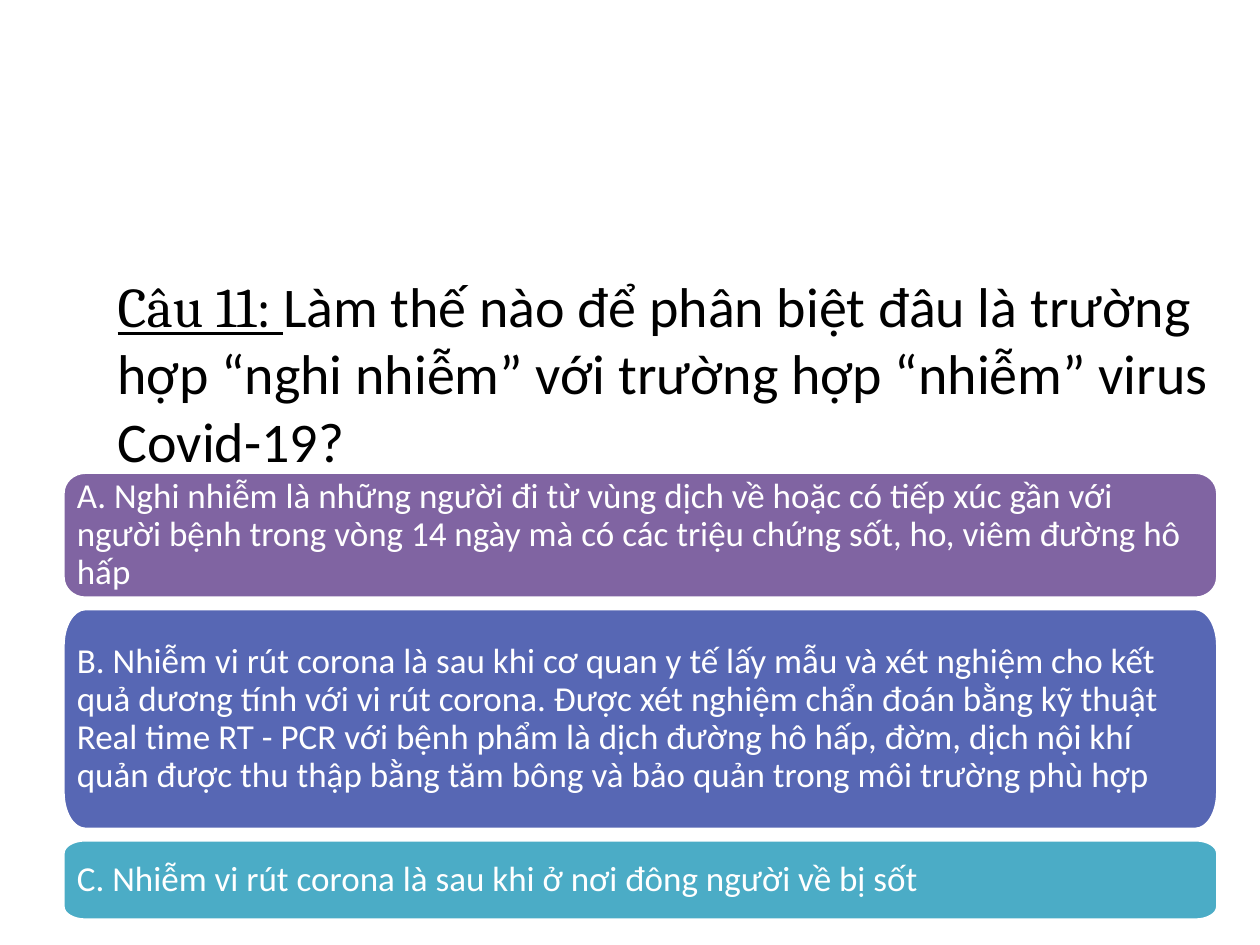
from dataclasses import dataclass

from lxml import etree
from pptx import Presentation
from pptx.dml.color import RGBColor
from pptx.enum.text import MSO_ANCHOR as Anchor, PP_ALIGN as Align
from pptx.oxml.ns import qn
from pptx.util import Cm, Pt


@dataclass
class Theme:
    ink: str = "000000"
    paper: str = "FFFFFF"
    purple: str = "8064A2"
    indigo: str = "5767B4"
    teal: str = "4BACC6"
    body: str = "Calibri"
    label: str = "Cambria"
    question: int = 32
    answer: int = 20


theme = Theme()


def add_run(p, text, font, size, color, underline=None):
    r = p.add_run()
    r.text = text
    r.font.name = font
    r.font.size = Pt(size)
    r.font.color.rgb = RGBColor.from_string(color)
    r.font.underline = underline


def add_panel(shapes, left, top, width, height, rx, ry):
    right, bottom = left + width, top + height
    outline = [
        (left, top + ry), (left + rx, top),
        (right - rx, top), (right, top + ry),
        (right, bottom - ry), (right - rx, bottom),
        (left + rx, bottom), (left, bottom - ry),
    ]
    points = [(Cm(x), Cm(y)) for x, y in outline]
    builder = shapes.build_freeform(*points[0])
    builder.add_line_segments(points[1:], close=True)
    sp = builder.convert_to_shape()
    corners = [(left, top), (right, top), (right, bottom), (left, bottom)]
    lines = list(sp._element.iter(qn("a:lnTo")))[:7:2]
    for i, (line, (x, y)) in enumerate(zip(lines, corners)):
        start, end = points[2 * i], points[2 * i + 1]
        line.tag = qn("a:cubicBezTo")
        for n, (px, py) in enumerate((start, end)):
            pt = etree.Element(qn("a:pt"))
            pt.set("x", str(round(px + 0.55 * (Cm(x) - px) - Cm(left))))
            pt.set("y", str(round(py + 0.55 * (Cm(y) - py) - Cm(top))))
            line.insert(n, pt)
    return sp


prs = Presentation()
prs.slide_width, prs.slide_height = Cm(25.4), Cm(19.05)
s = prs.slides.add_slide(prs.slide_layouts[6])

sp = s.shapes.add_textbox(Cm(2.12), Cm(5.71), Cm(22.86), Cm(3.6))
tf = sp.text_frame
tf.word_wrap = True
tf.vertical_anchor = Anchor.MIDDLE
p = tf.paragraphs[0]
p.alignment = Align.LEFT
add_run(p, "Câu 11: ", theme.label, theme.question, theme.ink, underline=True)
add_run(
    p,
    "Làm thế nào để phân biệt đâu là trường hợp “nghi nhiễm” với trường hợp “nhiễm” virus Covid-19?",
    theme.body, theme.question, theme.ink,
)

answers = [
    (2.54, theme.purple,
     "A. Nghi nhiễm là những người đi từ vùng dịch về hoặc có tiếp xúc gần với người bệnh "
     "trong vòng 14 ngày mà có các triệu chứng sốt, ho, viêm đường hô hấp"),
    (4.45, theme.indigo,
     "B. Nhiễm vi rút corona là sau khi cơ quan y tế lấy mẫu và xét nghiệm cho kết quả dương tính "
     "với vi rút corona. Được xét nghiệm chẩn đoán bằng kỹ thuật Real time RT - PCR với bệnh phẩm "
     "là dịch đường hô hấp, đờm, dịch nội khí quản được thu thập bằng tăm bông và bảo quản trong "
     "môi trường phù hợp"),
    (1.62, theme.teal,
     "C. Nhiễm vi rút corona là sau khi ở nơi đông người về bị sốt"),
]
gap = 0.21
top = 9.52
for height, color, text in answers:
    sp = add_panel(s.shapes, 1.27, top, 23.28, height, 0.45, height / 6)
    sp.shadow.inherit = False
    sp.fill.solid()
    sp.fill.fore_color.rgb = RGBColor.from_string(color)
    sp.line.color.rgb = RGBColor.from_string(theme.paper)
    sp.line.width = Pt(2)
    tf = sp.text_frame
    tf.word_wrap = True
    tf.vertical_anchor = Anchor.MIDDLE
    tf.margin_left = tf.margin_right = tf.margin_top = tf.margin_bottom = Cm(0.28)
    p = tf.paragraphs[0]
    p.alignment = Align.LEFT
    p.line_spacing = 0.9
    p.space_after = Pt(7)
    add_run(p, text, theme.body, theme.answer, theme.paper)
    top += height + gap

prs.save("out.pptx")
